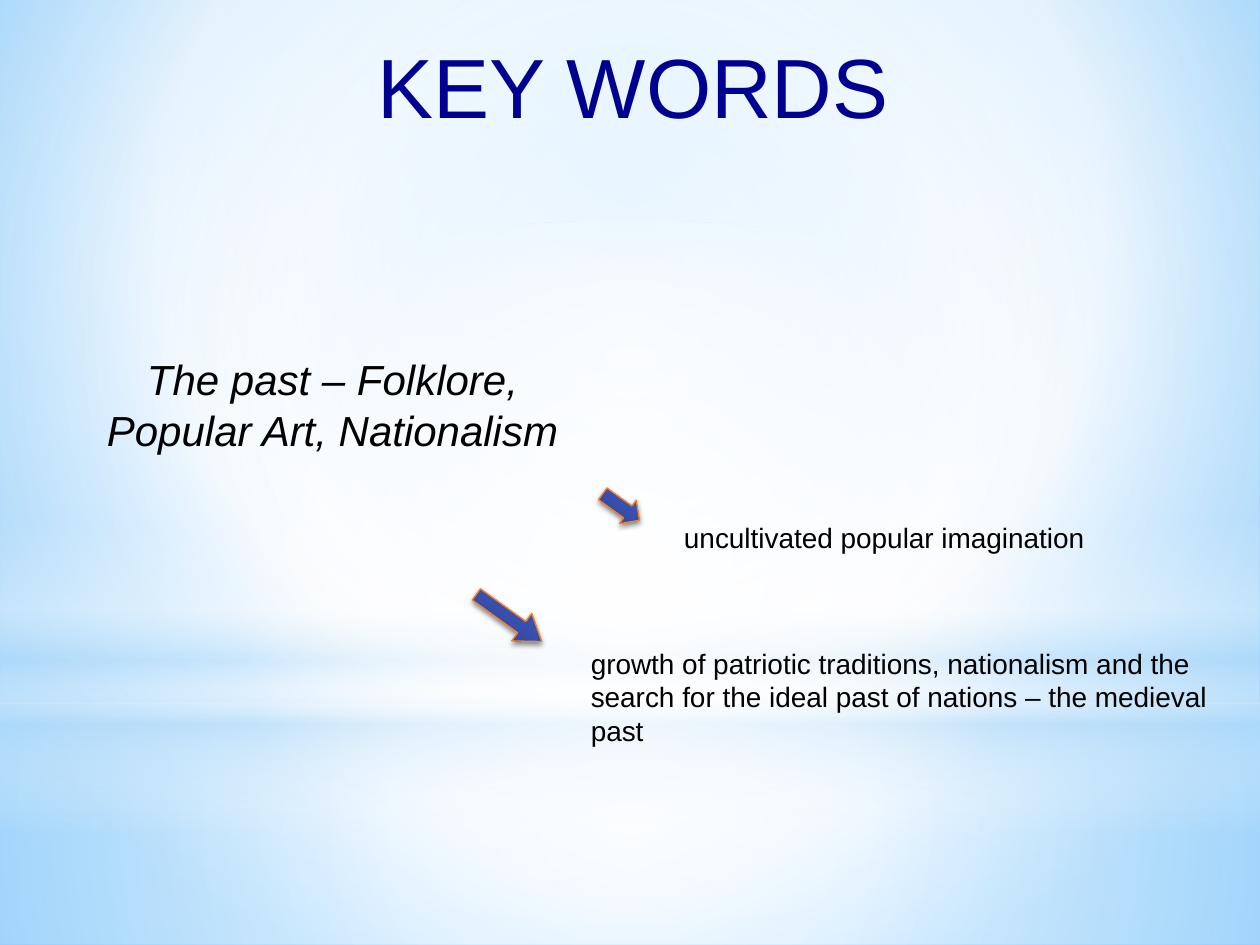
import pptx
import pptx.dml.color
import pptx.enum.shapes
import pptx.enum.text
import pptx.oxml
import pptx.oxml.ns
import pptx.util
from pptx.util import Inches

COLORS = {
    "title": "000090", "text": "000000", "white": "FFFFFF", "mist": "B4DCFA",
    "sky": "9ED5FF", "deep sky": "5BB9FF", "arrow top": "435EC5",
    "arrow bottom": "2B4092", "arrow edge": "FF8021", "shadow": "000000",
}
NS = pptx.oxml.ns.nsdecls("a")
SHAPES = pptx.enum.shapes.MSO_SHAPE
ALIGN = pptx.enum.text.PP_ALIGN
CENTER = (50, 50, 50, 50)


def set_gradient(owner, element, stops, focus=None):
    """Fill with (position, color, opacity) stops: round a focus, or downwards."""
    owner.fill.solid()
    stop_xml = "".join(
        f'<a:gs pos="{position * 1000}"><a:srgbClr val="{COLORS[color]}">'
        f'<a:alpha val="{opacity * 1000}"/></a:srgbClr></a:gs>'
        for position, color, opacity in stops)
    if focus:
        left, top, right, bottom = (side * 1000 for side in focus)
        course = (f'<a:path path="circle"><a:fillToRect l="{left}" t="{top}" '
                  f'r="{right}" b="{bottom}"/></a:path>')
    else:
        course = '<a:lin ang="5400000" scaled="0"/>'
    solid = element.find(".//" + pptx.oxml.ns.qn("a:solidFill"))
    solid.getparent().replace(solid, pptx.oxml.parse_xml(
        f'<a:gradFill {NS} rotWithShape="1"><a:gsLst>{stop_xml}</a:gsLst>{course}</a:gradFill>'))


def add_text(text, left, top, width, height, size=16, color="text",
             italic=False, align=ALIGN.LEFT, margin_left=0.1, margin_top=0.05):
    box = slide.shapes.add_textbox(Inches(left), Inches(top), Inches(width), Inches(height))
    frame = box.text_frame
    frame.word_wrap = True
    frame.margin_left = Inches(margin_left)
    frame.margin_top = Inches(margin_top)
    paragraph = frame.paragraphs[0]
    paragraph.alignment = align
    run = paragraph.add_run()
    run.text = text
    run.font.name = "Arial"
    run.font.size = pptx.util.Pt(size)
    run.font.italic = italic
    run.font.color.rgb = pptx.dml.color.RGBColor.from_string(COLORS[color])


prs = pptx.Presentation()
prs.slide_width = Inches(10)
prs.slide_height = Inches(7.5)
slide = prs.slides.add_slide(prs.slide_layouts[6])

# Sky backdrop: a round gradient under layers of translucent light
set_gradient(slide.background, slide.element,
             [(0, "sky", 100), (60, "white", 100), (100, "deep sky", 100)],
             focus=(20, 10, 20, 60))
light_layers = [
    (SHAPES.RECTANGLE, 5.58, 1.92, CENTER,
     [(0, "white", 91), (37, "white", 76), (100, "mist", 79)]),
    (SHAPES.RECTANGLE, 0, 5.58, CENTER,
     [(0, "white", 89), (48, "white", 62), (100, "mist", 79)]),
    (SHAPES.RECTANGLE, 4.12, 2.5, None,
     [(0, "white", 0), (29, "white", 30), (45, "mist", 40),
      (55, "white", 26), (65, "mist", 60), (100, "white", 0)]),
    (SHAPES.OVAL, 1.75, 5.58, CENTER, [(0, "white", 100), (56, "white", 0)]),
]
for outline, top, height, focus, stops in light_layers:
    layer = slide.shapes.add_shape(outline, 0, Inches(top), prs.slide_width, Inches(height))
    layer.shadow.inherit = False
    set_gradient(layer, layer.element, stops, focus)
    layer.line.fill.background()

# Key words and their explanations
add_text("KEY WORDS", 0.68, 0.15, 8.64, 1.11, size=48, color="title",
         align=ALIGN.CENTER, margin_left=0.15, margin_top=0.12)
add_text("uncultivated popular imagination", 5.33, 4.08, 3.81, 0.37)
add_text("growth of patriotic traditions, nationalism and the search for "
         "the ideal past of nations – the medieval past", 4.59, 5.08, 5.11, 0.91)
add_text("The past – Folklore, Popular Art, Nationalism", 0.46, 2.76, 4.36, 0.91,
         size=24, italic=True, align=ALIGN.CENTER)

# Arrows from the key words to each explanation
for left, top, width, height, proportions in [
    (4.75, 3.91, 0.36, 0.23, (0.5, 0.5)),
    (3.72, 4.77, 0.64, 0.27, (0.41, 0.725)),
]:
    arrow = slide.shapes.add_shape(SHAPES.RIGHT_ARROW, Inches(left), Inches(top),
                                   Inches(width), Inches(height))
    arrow.rotation = 35.7
    for index, proportion in enumerate(proportions):
        arrow.adjustments[index] = proportion
    set_gradient(arrow, arrow.element, [(0, "arrow top", 100), (100, "arrow bottom", 100)])
    arrow.line.color.rgb = pptx.dml.color.RGBColor.from_string(COLORS["arrow edge"])
    arrow.line.width = pptx.util.Pt(0.75)
    arrow.shadow.inherit = False
    effects = arrow.element.spPr.find(pptx.oxml.ns.qn("a:effectLst"))
    effects.append(pptx.oxml.parse_xml(
        f'<a:outerShdw {NS} blurRad="40000" dist="23000" dir="5400000" rotWithShape="0">'
        f'<a:srgbClr val="{COLORS["shadow"]}"><a:alpha val="45000"/></a:srgbClr></a:outerShdw>'))

prs.save("out.pptx")
